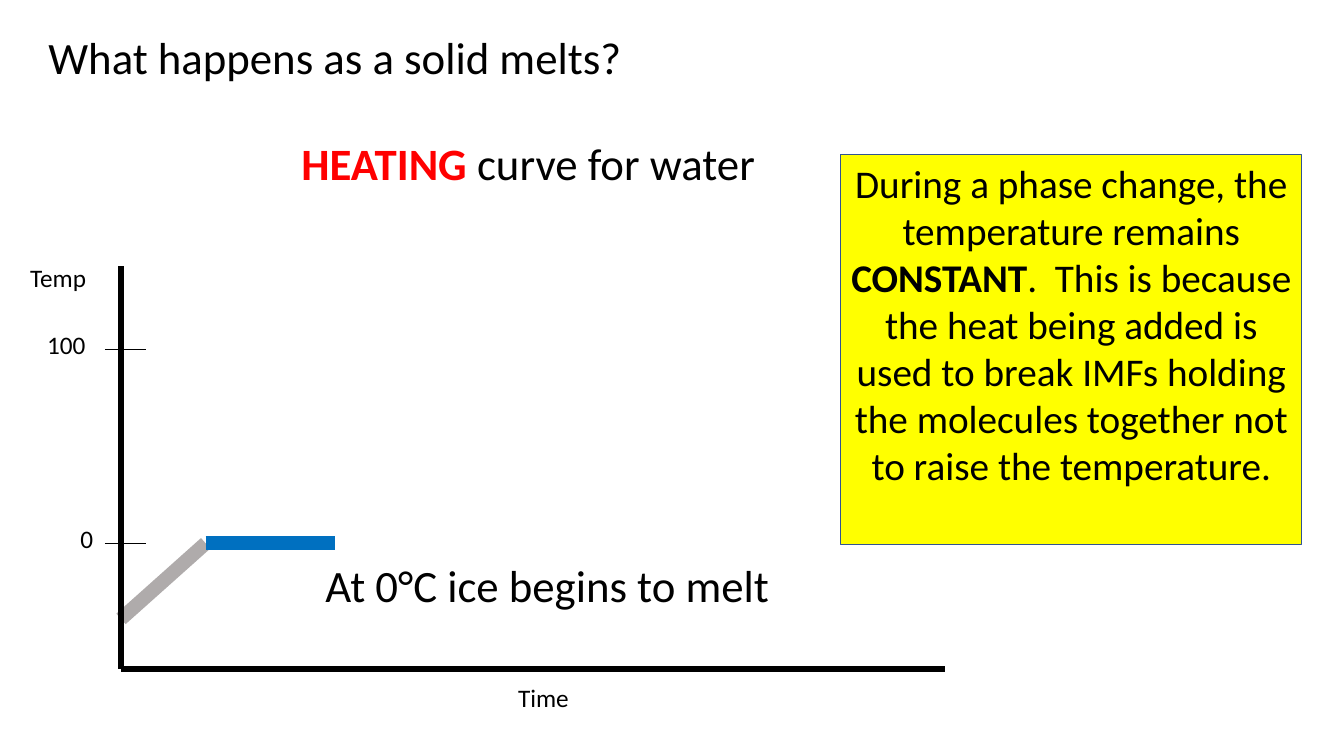
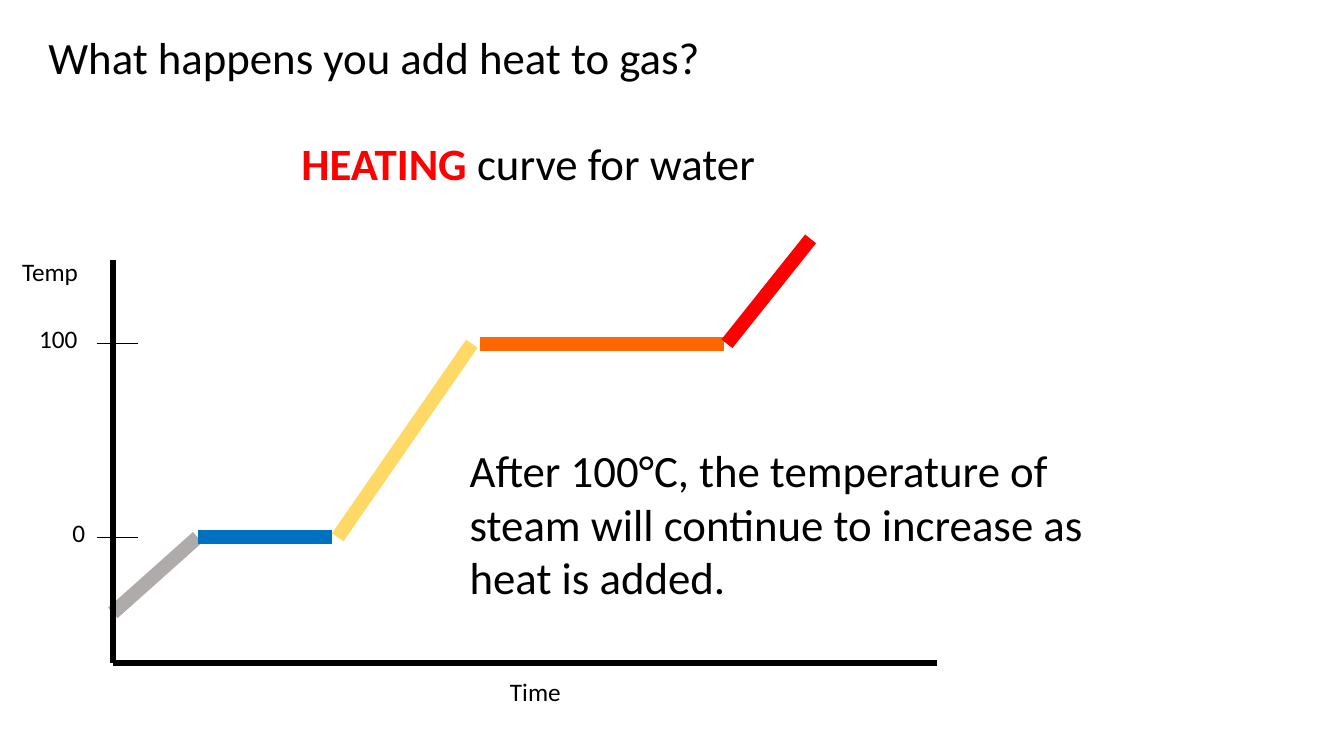
"""Build two slides that follow the heating curve of water."""
import pptx
import pptx.dml.color
import pptx.enum.shapes
import pptx.enum.text
import pptx.util
from lxml import etree
from pptx.oxml.ns import qn

PX = 9144
FONT = "Calibri"
COLORS = {
    "text": "000000", "axis": "000000", "heading": "FF0000",
    "note": "FFFF00", "note_border": "325491",
    "ice": "AFABAB", "melting": "0070C0", "water": "FFD966",
    "boiling": "FF6600", "steam": "FF0000",
}
AXIS_WIDTH, AXIS_HEIGHT = 817, 400
LEVELS = {"0": 275, "100": 83}
LABELS = [("0", -50, 250, 37), ("100", -83, 58, 70),
          ("Time", 384, 408, 90), ("Temp", -100, -9, 98)]


def px(*lengths):
    return [pptx.util.Emu(length * PX) for length in lengths]


def rgb(name):
    return pptx.dml.color.RGBColor.from_string(COLORS[name])


def write_text(shape, runs, size=32, align="LEFT", margin=10):
    """Fill a shape with one paragraph of (text, color, bold) runs."""
    frame = shape.text_frame
    frame.word_wrap = True
    frame.auto_size = pptx.enum.text.MSO_AUTO_SIZE.NONE
    frame.vertical_anchor = pptx.enum.text.MSO_ANCHOR.TOP
    frame.margin_left, frame.margin_right = px(margin, margin)
    frame.margin_top, frame.margin_bottom = px(5, 5)
    paragraph = frame.paragraphs[0]
    paragraph.alignment = pptx.enum.text.PP_ALIGN[align]
    for text, color, bold in runs:
        run = paragraph.add_run()
        run.text = text
        run.font.name = FONT
        run.font.size = pptx.util.Pt(size)
        run.font.bold = bold
        run.font.color.rgb = rgb(color)


def add_text(shapes, box, text, **text_format):
    textbox = shapes.add_textbox(*px(*box))
    runs = [(text, "text", False)] if isinstance(text, str) else text
    write_text(textbox, runs, **text_format)


def add_line(shapes, origin, start, end, color, weight):
    """Draw a line between two points measured from the origin."""
    left, top = origin
    connector = shapes.add_connector(
        pptx.enum.shapes.MSO_CONNECTOR.STRAIGHT,
        *px(left + start[0], top + start[1], left + end[0], top + end[1]))
    connector.line.color.rgb = rgb(color)
    connector.line.width = pptx.util.Pt(weight)
    etree.SubElement(connector._element.spPr, qn("a:effectLst"))


def add_axes(slide, origin):
    """Draw the grouped axes, ticks and labels from the top of the Temp axis."""
    shapes = slide.shapes.add_group_shape().shapes
    corner = (0, AXIS_HEIGHT)
    add_line(shapes, origin, (0, 0), corner, "axis", 4.5)
    add_line(shapes, origin, corner, (AXIS_WIDTH, AXIS_HEIGHT), "axis", 4.5)
    for level in LEVELS.values():
        add_line(shapes, origin, (-16, level), (25, level), "axis", 0.75)
    for text, left, top, width in LABELS:
        add_text(shapes, (origin[0] + left, origin[1] + top, width, 50), text, size=18)


def add_curve(slide, origin, segments):
    for color, start, end in segments:
        add_line(slide.shapes, origin, start, end, color, 10)


def add_note(slide, box, runs):
    """Draw the bordered note with centred text."""
    note = slide.shapes.add_shape(pptx.enum.shapes.MSO_SHAPE.RECTANGLE, *px(*box))
    note.shadow.inherit = False
    note.fill.solid()
    note.fill.fore_color.rgb = rgb("note")
    note.line.color.rgb = rgb("note_border")
    note.line.width = pptx.util.Pt(0.75)
    write_text(note, runs, size=28, align="CENTER", margin=9)


def add_curve_slide(presentation, title, title_width, origin, segments, caption, caption_box):
    """Add a slide with its title, heading, heating curve and caption."""
    slide = presentation.slides.add_slide(presentation.slide_layouts[5])
    placeholder = slide.shapes.title
    placeholder.left, placeholder.top, placeholder.width, placeholder.height = px(
        38, 24, title_width, 64)
    write_text(placeholder, [(title, "text", False)])
    add_curve(slide, origin, segments)
    add_axes(slide, origin)
    add_text(slide.shapes, caption_box, caption)
    add_text(slide.shapes, (289, 130, 474, 64),
             [("HEATING", "heading", True), (" curve for water", "text", False)])
    return slide


def main():
    presentation = pptx.Presentation()
    presentation.slide_width, presentation.slide_height = px(1333, 750)
    freezing, boiling = LEVELS["0"], LEVELS["100"]
    ice = ("ice", (0, 350), (84, freezing))

    slide = add_curve_slide(
        presentation, "What happens as a solid melts?", 595, (120, 264),
        [ice, ("melting", (84, freezing), (212, freezing))],
        "At 0°C ice begins to melt", (313, 548, 484, 64))
    add_note(slide, (834, 153, 457, 387), [
        ("During a phase change, the temperature remains ", "text", False),
        ("CONSTANT", "text", True),
        (".  This is because the heat being added is used to break IMFs holding "
         "the molecules together not to raise the temperature.", "text", False)])

    add_curve_slide(
        presentation, "What happens you add heat to gas?", 674, (112, 258),
        [ice,
         ("melting", (84, freezing), (217, freezing)),
         ("water", (223, freezing), (356, boiling)),
         ("boiling", (364, boiling), (606, boiling)),
         ("steam", (609, boiling), (692, -21))],
        "After 100°C, the temperature of steam will continue to increase as heat is added.",
        (456, 434, 657, 172))
    presentation.save("out.pptx")


if __name__ == "__main__":
    main()
